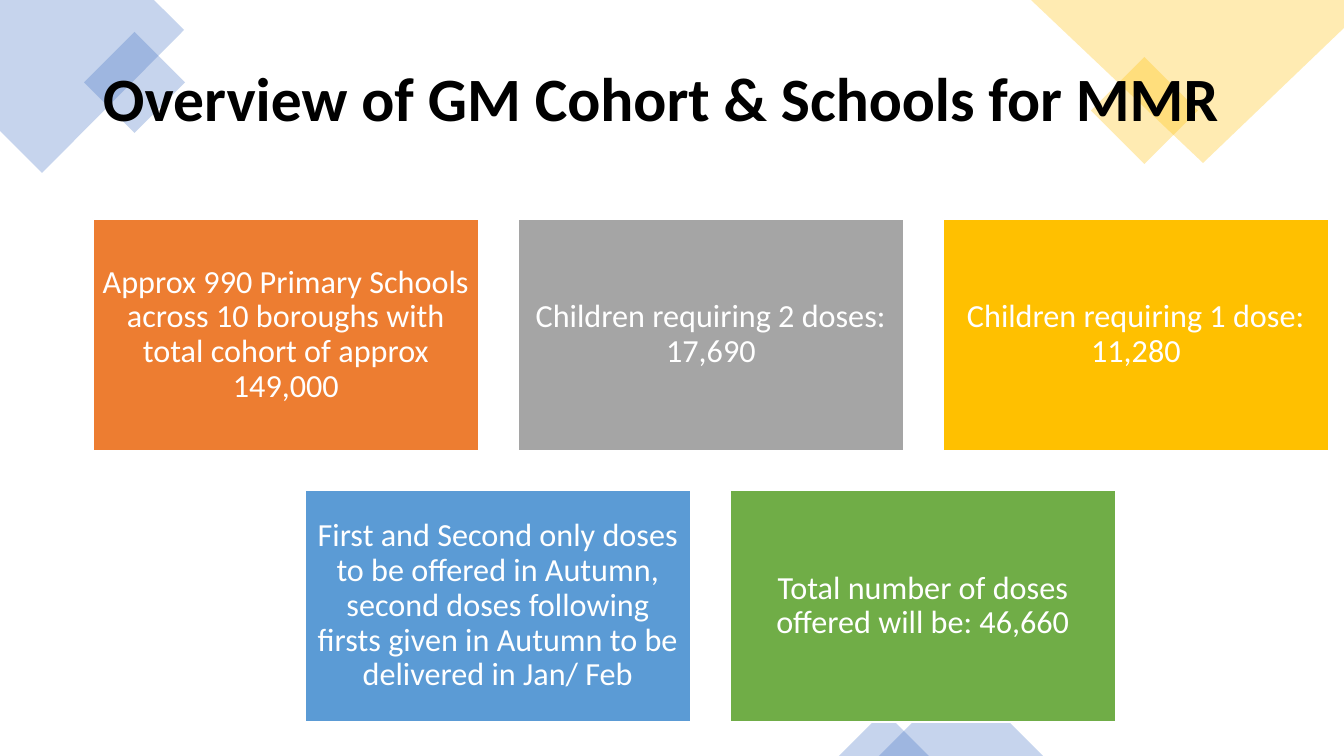
from lxml import etree
from pptx import Presentation
from pptx.dml.color import RGBColor
from pptx.enum.shapes import MSO_SHAPE
from pptx.enum.text import MSO_ANCHOR, PP_ALIGN
from pptx.oxml.ns import qn
from pptx.util import Pt

EMU_PER_INCH, PX_PER_INCH = 914400, 100.8
SLIDE_WIDTH, SLIDE_HEIGHT = 1344, 756
RECTANGLE, DIAMOND = MSO_SHAPE.RECTANGLE, MSO_SHAPE.DIAMOND
TRIANGLE = MSO_SHAPE.ISOSCELES_TRIANGLE
LEFT, CENTER = PP_ALIGN.LEFT, PP_ALIGN.CENTER
MIDDLE, BOTTOM = MSO_ANCHOR.MIDDLE, MSO_ANCHOR.BOTTOM

BLUE, GOLD, WHITE, BLACK = "4472C4", "FFC000", "FFFFFF", "000000"
CARD_WIDTH, CARD_HEIGHT, CARD_GAP = 386, 232, 39
CARD_ROWS = [
    [
        ("Approx 990 Primary Schools across 10 boroughs with total cohort of approx 149,000", "ED7D31"),
        ("Children requiring 2 doses: 17,690", "A5A5A5"),
        ("Children requiring 1 dose: 11,280", GOLD),
    ],
    [
        ("First and Second only doses to be offered in Autumn, second doses following "
         "firsts given in Autumn to be delivered in Jan/ Feb", "5B9BD5"),
        ("Total number of doses offered will be: 46,660", "70AD47"),
    ],
]


def px(length):
    """Turn a length in px into EMU."""
    return round(length * EMU_PER_INCH / PX_PER_INCH)


def color(hex_code):
    """Turn a hex string into a colour."""
    return RGBColor.from_string(hex_code)


def paint(shape, hex_code, opacity=100):
    """Give a shape a flat fill without outline or shadow."""
    shape.shadow.inherit = False
    shape.line.fill.background()
    shape.fill.solid()
    shape.fill.fore_color.rgb = color(hex_code)
    if opacity < 100:
        tint = shape.fill._xPr.find(".//" + qn("a:srgbClr"))
        etree.SubElement(tint, qn("a:alpha"), val=str(opacity * 1000))


def write(shape, text, size, hex_code, align, anchor, margin, bold=False):
    """Write one wrapped paragraph into a shape."""
    frame = shape.text_frame
    frame_format = {"word_wrap": True, "vertical_anchor": anchor}
    frame_format.update({f"margin_{side}": px(margin) for side in ("left", "right", "top", "bottom")})
    for attribute, value in frame_format.items():
        setattr(frame, attribute, value)
    paragraph = frame.paragraphs[0]
    paragraph.text = text
    paragraph.alignment = align
    paragraph.line_spacing = 0.9
    for attribute, value in {"name": "Calibri", "size": Pt(size), "bold": bold}.items():
        setattr(paragraph.font, attribute, value)
    paragraph.font.color.rgb = color(hex_code)


def add_preset(slide, kind, left, top, width, height):
    """Add a preset shape at a box in px."""
    return slide.shapes.add_shape(kind, px(left), px(top), px(width), px(height))


def add_decoration(slide, width, height):
    """Place the translucent corner and bottom-edge ornaments."""
    corners = [
        (BLUE, [(0, 0), (154, 0), (184, 30), (42, 173), (0, 131)]),
        (GOLD, [(width - 313, 0), (width, 0), (width, 28), (width - 141, 163)]),
    ]
    for hex_code, points in corners:
        outline = slide.shapes.build_freeform(*points[0], scale=px(100) / 100)
        outline.add_line_segments(points[1:], close=True)
        paint(outline.convert_to_shape(), hex_code, 30)
    ornaments = [
        (DIAMOND, BLUE, 84, 32, 101, 101),
        (DIAMOND, GOLD, width - 253, 57, 107, 107),
        (TRIANGLE, BLUE, width - 465, height - 82, 164, 82),
        (TRIANGLE, BLUE, width - 505, height - 45, 90, 45),
    ]
    for kind, hex_code, *box in ornaments:
        paint(add_preset(slide, kind, *box), hex_code, 30)


def add_title(slide, left, top, width, height):
    """Place the slide title in its box."""
    title = slide.shapes.add_textbox(px(left), px(top), px(width), px(height))
    write(title, "Overview of GM Cohort & Schools for MMR", 44, BLACK, LEFT, BOTTOM, 10, bold=True)
    title.text_frame.margin_bottom = px(5)


def add_cards(slide, left, top, width):
    """Place rows of fact cards, each row centred in the width."""
    for row, cards in enumerate(CARD_ROWS):
        row_width = len(cards) * (CARD_WIDTH + CARD_GAP) - CARD_GAP
        row_left = left + (width - row_width) // 2
        row_top = top + row * (CARD_HEIGHT + CARD_GAP)
        for column, (fact, hex_code) in enumerate(cards):
            card_left = row_left + column * (CARD_WIDTH + CARD_GAP)
            card = add_preset(slide, RECTANGLE, card_left, row_top, CARD_WIDTH, CARD_HEIGHT)
            paint(card, hex_code)
            card.line.color.rgb = color(WHITE)
            card.line.width = Pt(1)
            write(card, fact, 23, WHITE, CENTER, MIDDLE, 9)


def main():
    """Build the slide and save it."""
    deck = Presentation()
    deck.slide_width, deck.slide_height = px(SLIDE_WIDTH), px(SLIDE_HEIGHT)
    slide = deck.slides.add_slide(deck.slide_layouts[6])
    add_decoration(slide, SLIDE_WIDTH, SLIDE_HEIGHT)
    add_title(slide, 93, 28, 1158, 112)
    add_cards(slide, 93, 219, 1236)
    deck.save("out.pptx")


if __name__ == "__main__":
    main()
